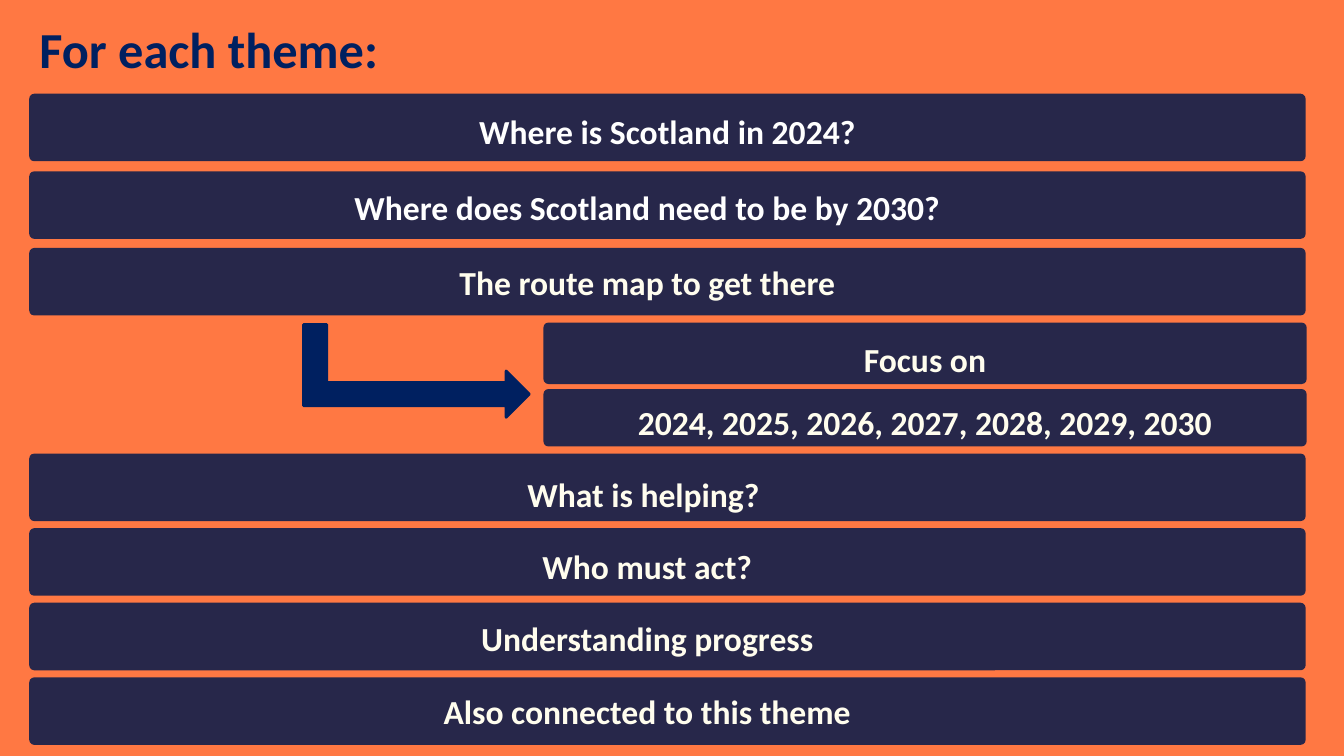
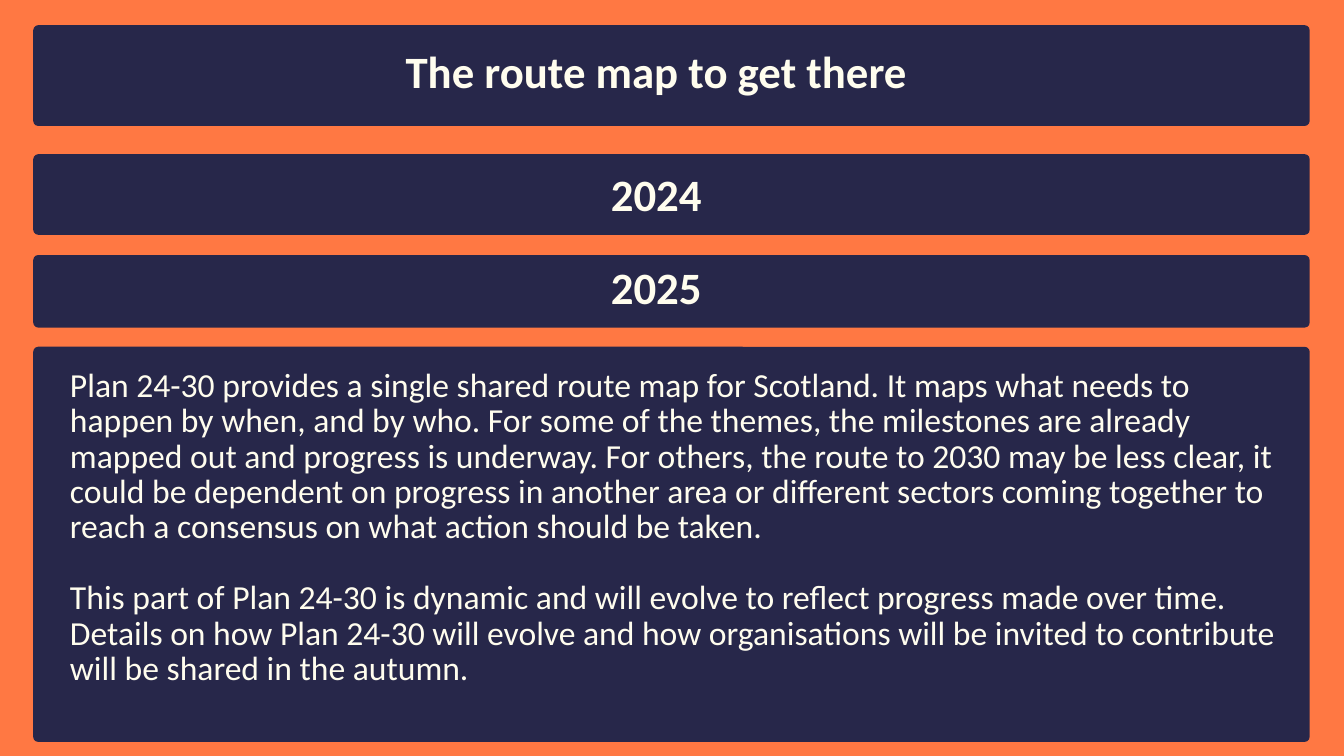
from pptx import Presentation
from pptx.dml.color import RGBColor
from pptx.enum.shapes import MSO_SHAPE
from pptx.enum.text import MSO_ANCHOR, MSO_AUTO_SIZE, PP_ALIGN
from pptx.util import Pt

PX = 9144  # 100 px to the inch
ORANGE = RGBColor(0xFF, 0x78, 0x43)
INDIGO = RGBColor(0x27, 0x27, 0x4A)
NAVY = RGBColor(0x00, 0x20, 0x60)
CREAM = RGBColor(0xFF, 0xFD, 0xEE)
WHITE = RGBColor(0xFF, 0xFF, 0xFF)
FONT = "Calibri"
BAND_WIDTH = 1266
BAND_RADIUS = 5
BAND_LINE = 33.6
BODY_LINE = 25.3
TITLE_ONLY = 5

# top, text inset from the top, shift of the text centre, colour, text
THEME_LEFT, THEME_HEIGHT = 29, 67
THEME_BANDS = [
    (93, 9, 0, WHITE, "Where is Scotland in 2024?"),
    (170, 7, -20, WHITE, "Where does Scotland need to be by 2030?"),
    (246, 6, -20, CREAM, "The route map to get there"),
]
LOWER_TOP, LOWER_PITCH = 450, 74
LOWER_BANDS = [
    (12, "What is helping? "),
    (9, "Who must act?"),
    (7, "Understanding progress"),
    (5, "Also connected to this theme"),
]
FOCUS_LEFT, FOCUS_WIDTH = 539, 757
# top, height, text inset from the top, text
FOCUS_BANDS = [
    (320, 61, 8, "Focus on"),
    (386, 57, 5, "2024, 2025, 2026, 2027, 2028, 2029, 2030"),
]

ROUTE_LEFT = 33
ROUTE_SHIFT = -15
YEAR_BANDS = [(153, 80, 18, "2024"), (253, 72, 10, "2025")]
BODY = [
    "Plan 24-30 provides a single shared route map for Scotland. It maps what "
    "needs to happen by when, and by who. For some of the themes, the "
    "milestones are already mapped out and progress is underway. For others, "
    "the route to 2030 may be less clear, it could be dependent on progress in "
    "another area or different sectors coming together to reach a consensus on "
    "what action should be taken.",
    "This part of Plan 24-30 is dynamic and will evolve to reflect progress made "
    "over time. Details on how Plan 24-30 will evolve and how organisations will "
    "be invited to contribute will be shared in the autumn.",
]


def set_frame(shape, left=0, top=0, right=0, bottom=0):
    frame = shape.text_frame
    frame.word_wrap = True
    frame.auto_size = MSO_AUTO_SIZE.NONE
    frame.vertical_anchor = MSO_ANCHOR.TOP
    frame.margin_left, frame.margin_top = left * PX, top * PX
    frame.margin_right, frame.margin_bottom = right * PX, bottom * PX
    return frame


def write(paragraph, text, size, color, bold=True, align=PP_ALIGN.CENTER,
          line=None):
    paragraph.alignment = align
    if line:
        paragraph.line_spacing = Pt(line)
    run = paragraph.add_run()
    run.text = text
    run.font.name = FONT
    run.font.size = Pt(size)
    run.font.bold = bold
    run.font.color.rgb = color


def add_band(slide, left, top, width, height):
    band = slide.shapes.add_shape(MSO_SHAPE.ROUNDED_RECTANGLE, left * PX,
                                  top * PX, width * PX, height * PX)
    band.adjustments[0] = BAND_RADIUS / min(width, height)
    band.shadow.inherit = False
    band.fill.solid()
    band.fill.fore_color.rgb = INDIGO
    band.line.fill.background()
    return band


def add_label_band(slide, box, text, inset, shift=0, size=24, color=CREAM):
    """Add a band with one centred line, moved sideways by shift px."""
    band = add_band(slide, *box)
    frame = set_frame(band, left=max(2 * shift, 0), top=inset,
                      right=max(-2 * shift, 0))
    write(frame.paragraphs[0], text, size, color, line=BAND_LINE)


def place_title(slide, left, top, width, height):
    """Move the title and bring it to the front."""
    title = slide.shapes.title
    title.left, title.top = left * PX, top * PX
    title.width, title.height = width * PX, height * PX
    title._element.getparent().append(title._element)
    return title


def add_bent_arrow(slide):
    arrow = slide.shapes.add_shape(MSO_SHAPE.BENT_UP_ARROW, 367 * PX, 256 * PX,
                                   92 * PX, 224 * PX)
    arrow.rotation = 90
    arrow.shadow.inherit = False
    arrow.fill.solid()
    arrow.fill.fore_color.rgb = NAVY
    arrow.line.color.rgb = NAVY
    arrow.line.width = Pt(2)


def build_theme_slide(slide):
    frame = set_frame(place_title(slide, 29, 13, 956, 71), 10, 5, 10, 5)
    write(frame.paragraphs[0], "For each theme:", 36, NAVY, align=PP_ALIGN.LEFT)
    lower = [(LOWER_TOP + index * LOWER_PITCH, inset, -20, CREAM, text)
             for index, (inset, text) in enumerate(LOWER_BANDS)]
    for top, inset, shift, color, text in THEME_BANDS + lower:
        add_label_band(slide, (THEME_LEFT, top, BAND_WIDTH, THEME_HEIGHT), text,
                       inset, shift, color=color)
    for top, height, inset, text in FOCUS_BANDS:
        add_label_band(slide, (FOCUS_LEFT, top, FOCUS_WIDTH, height), text, inset)
    add_bent_arrow(slide)


def build_route_slide(slide):
    add_band(slide, ROUTE_LEFT, 25, BAND_WIDTH, 100)
    title = place_title(slide, ROUTE_LEFT + ROUTE_SHIFT, 50, BAND_WIDTH, 48)
    write(set_frame(title).paragraphs[0], "The route map to get there", 32, CREAM,
          line=BAND_LINE)
    for top, height, inset, text in YEAR_BANDS:
        add_label_band(slide, (ROUTE_LEFT, top, BAND_WIDTH, height), text, inset,
                       ROUTE_SHIFT, size=32)
    body = add_band(slide, ROUTE_LEFT, 344, BAND_WIDTH, 392)
    frame = set_frame(body, left=35, top=20, right=15)
    for index, text in enumerate(BODY):
        paragraph = frame.add_paragraph() if index else frame.paragraphs[0]
        paragraph.space_before = Pt(BODY_LINE if index else 0)
        write(paragraph, text, 24, CREAM, bold=False, align=PP_ALIGN.LEFT,
              line=BODY_LINE)


def main():
    presentation = Presentation()
    presentation.slide_width, presentation.slide_height = 1333 * PX, 750 * PX
    background = presentation.slide_master.background.fill
    background.solid()
    background.fore_color.rgb = ORANGE
    layout = presentation.slide_layouts[TITLE_ONLY]
    for build in (build_theme_slide, build_route_slide):
        build(presentation.slides.add_slide(layout))
    presentation.save("out.pptx")


if __name__ == "__main__":
    main()
